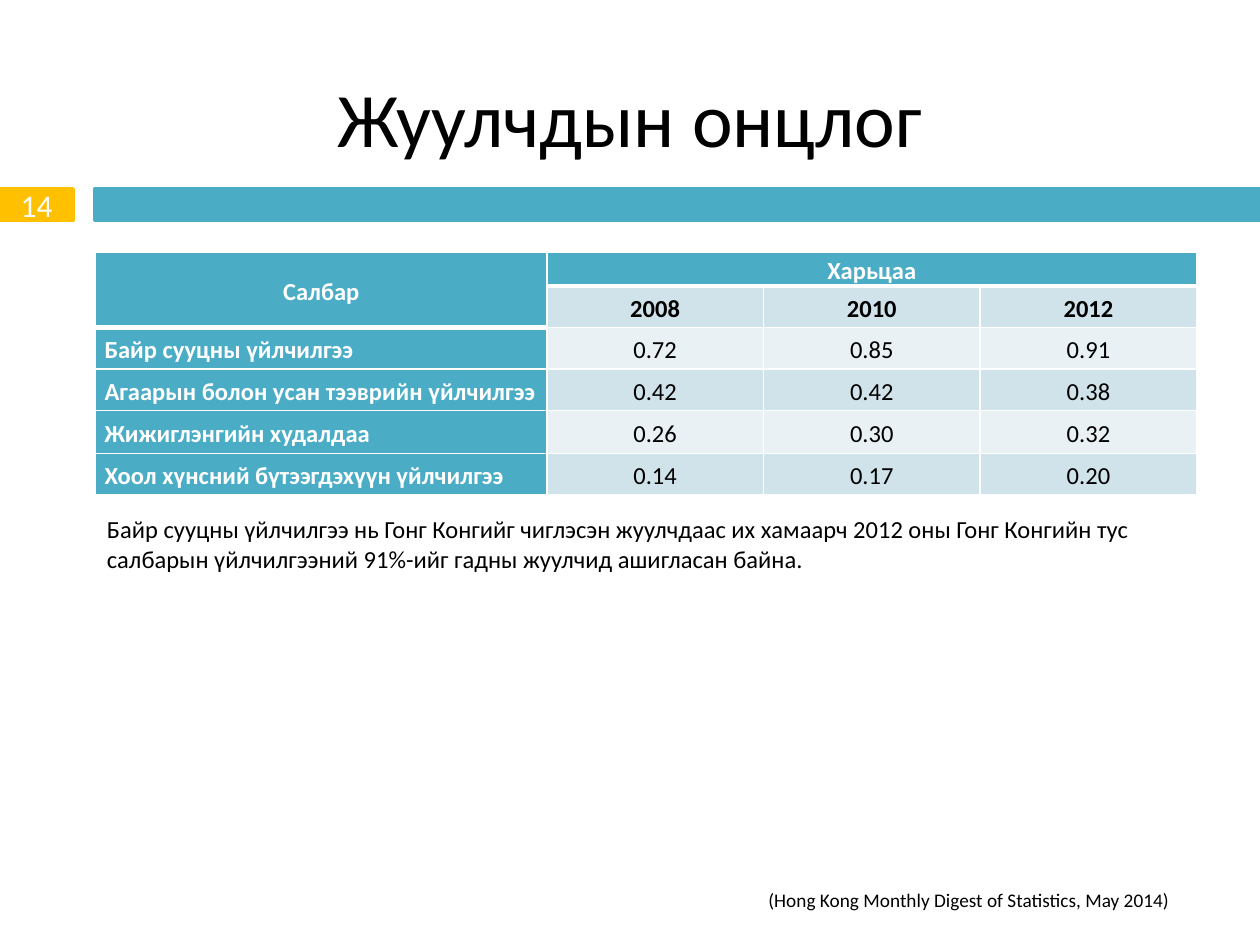
from lxml import etree
from pptx import Presentation
from pptx import util as u
from pptx.dml.color import RGBColor
from pptx.enum import shapes, text
from pptx.oxml import ns

TEAL = RGBColor(0x4B, 0xAC, 0xC6)
AMBER = RGBColor(0xFF, 0xC0, 0x00)
PALE = RGBColor(0xE9, 0xF1, 0xF5)
MIST = RGBColor(0xD0, 0xE3, 0xEA)
WHITE = RGBColor(0xFF, 0xFF, 0xFF)
BLACK = RGBColor(0x00, 0x00, 0x00)
CENTER, LEFT = text.PP_ALIGN.CENTER, text.PP_ALIGN.LEFT
MIDDLE, TOP = text.MSO_ANCHOR.MIDDLE, text.MSO_ANCHOR.TOP

deck = Presentation()
deck.slide_width, deck.slide_height = u.Inches(10), u.Inches(7.5)
slide = deck.slides.add_slide(deck.slide_layouts[6])
COL = deck.slide_width / 40
ROW = deck.slide_height / 30


def grid(left, top, width, height):
    return [round(n * step) for n, step in zip((left, top, width, height), (COL, ROW, COL, ROW))]


def write(frame, words, size, color=BLACK, align=LEFT, bold=False, spacing=None):
    paragraph = frame.paragraphs[0]
    run = paragraph.add_run()
    run.text = words
    for target, values in (
        (paragraph, {"alignment": align, "line_spacing": spacing}),
        (run.font, {"name": "Calibri", "size": u.Pt(size), "bold": bold}),
    ):
        for key, value in values.items():
            setattr(target, key, value)
    run.font.color.rgb = color


captions = [
    ((2, 1.2, 36, 5), "Жуулчдын онцлог", 44, CENTER, MIDDLE, True),
    ((3, 16.12, 35, 2.28),
     "Байр сууцны үйлчилгээ нь Гонг Конгийг чиглэсэн жуулчдаас их хамаарч 2012 оны "
     "Гонг Конгийн тус салбарын үйлчилгээний 91%-ийг гадны жуулчид ашигласан байна.",
     14, LEFT, MIDDLE, True),
    ((24, 28, 13.64, 1.16), "(Hong Kong Monthly Digest of Statistics, May 2014)", 11, LEFT, TOP, False),
]
for area, words, size, align, anchor, wrap in captions:
    frame = slide.shapes.add_textbox(*grid(*area)).text_frame
    frame.word_wrap = wrap
    frame.vertical_anchor = anchor
    write(frame, words, size, align=align)

for area, color, number in (((3, 6, 37, 1), TEAL, ""), ((0, 6, 2.32, 1), AMBER, "14")):
    band = slide.shapes.add_shape(shapes.MSO_SHAPE.RECTANGLE, *grid(*area))
    band.shadow.inherit = False
    band.fill.solid()
    band.fill.fore_color.rgb = color
    band.line.color.rgb = color
    band.line.width = u.Pt(2)
    if number:
        band.text_frame.vertical_anchor = MIDDLE
        write(band.text_frame, number, 18, WHITE, CENTER)

ratios = [
    ("Салбар", "Харьцаа", "", ""),
    ("", "2008", "2010", "2012"),
    ("Байр сууцны үйлчилгээ", "0.72", "0.85", "0.91"),
    ("Агаарын болон усан тээврийн үйлчилгээ", "0.42", "0.42", "0.38"),
    ("Жижиглэнгийн худалдаа", "0.26", "0.30", "0.32"),
    ("Хоол хүнсний бүтээгдэхүүн үйлчилгээ", "0.14", "0.17", "0.20"),
]
table = slide.shapes.add_table(6, 4, *grid(3.04, 8, 35, 7.72)).table
for column, width in zip(table.columns, (14.32, 6.88, 6.88, 6.88)):
    column.width = round(width * COL)
for line, height in zip(table.rows, (1.04, 1.32, 1.32, 1.32, 1.36, 1.32)):
    line.height = round(height * ROW)
table.cell(0, 0).merge(table.cell(1, 0))
table.cell(0, 1).merge(table.cell(0, 3))

for r, entries in enumerate(ratios):
    for c, words in enumerate(entries):
        cell = table.cell(r, c)
        heading = r == 0 or c == 0
        header_end = 1 if c == 0 else 0
        layout = {
            "margin_left": u.Inches(0.07), "margin_right": u.Inches(0.07),
            "margin_top": 0, "margin_bottom": 0,
            "vertical_anchor": TOP if (r, c) == (0, 1) else MIDDLE,
        }
        for key, value in layout.items():
            setattr(cell, key, value)
        borders = {
            "lnL": 1, "lnR": 1,
            "lnT": 3 if r == header_end + 1 else 1,
            "lnB": 3 if r <= header_end else 1,
        }
        for side, points in borders.items():
            edge = etree.SubElement(cell._tc.get_or_add_tcPr(), ns.qn("a:" + side), w=str(u.Pt(points)))
            paint = etree.SubElement(edge, ns.qn("a:solidFill"))
            etree.SubElement(paint, ns.qn("a:srgbClr"), val=str(WHITE))
        cell.fill.solid()
        cell.fill.fore_color.rgb = TEAL if heading else MIST if r % 2 else PALE
        if words:
            write(cell.text_frame, words, 14, WHITE if heading else BLACK,
                  LEFT if c == 0 and r > 1 else CENTER, heading or r == 1, 1.15)

deck.save("out.pptx")
